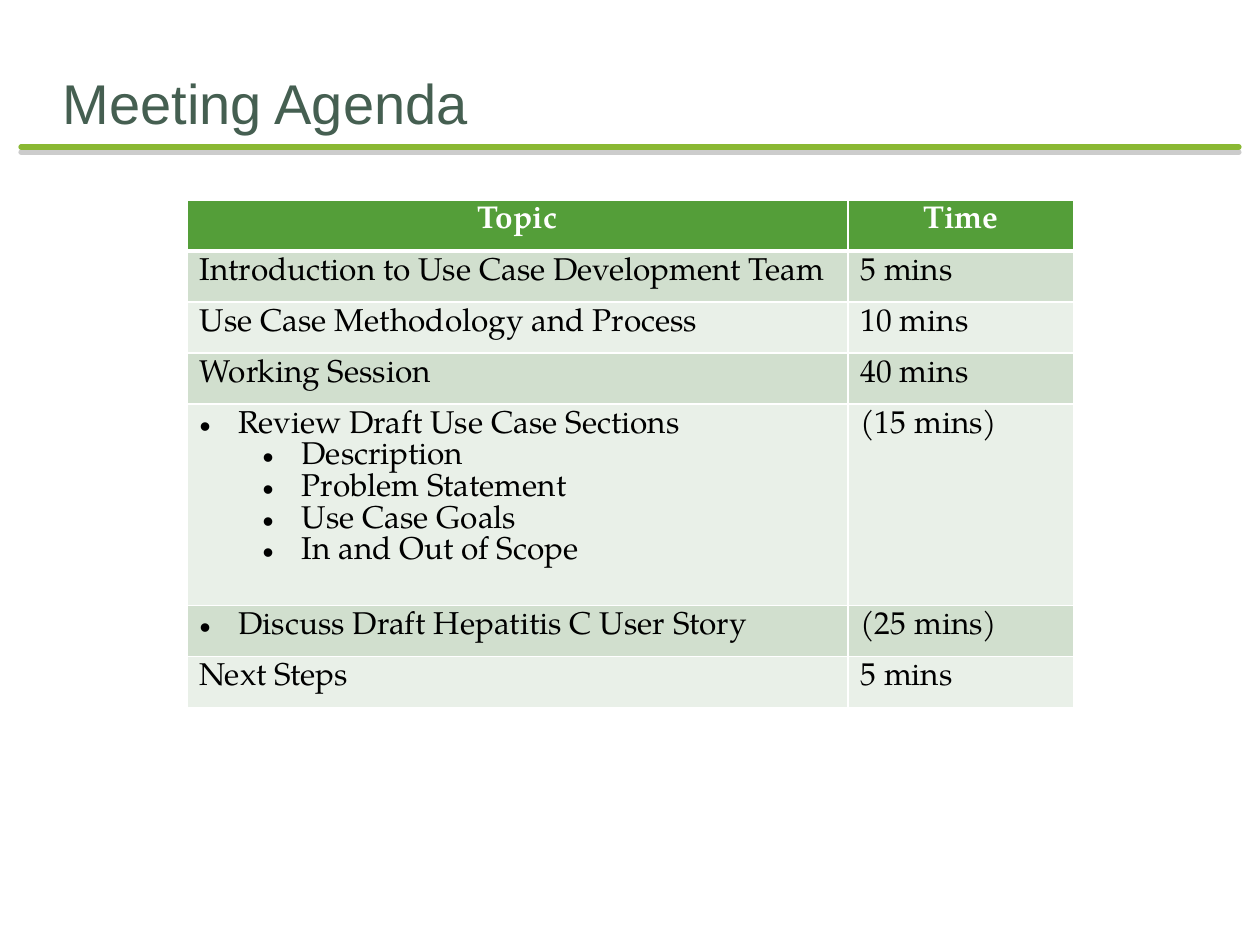
from lxml.etree import SubElement
from pptx import Presentation
from pptx.dml.color import RGBColor
from pptx.enum.shapes import MSO_CONNECTOR as Connector
from pptx.enum.text import MSO_ANCHOR as Anchor, PP_ALIGN as Align
from pptx.oxml.ns import qn
from pptx.util import Emu, Pt

COLORS = {
    "title": "455F51", "rule": "8AB833", "shadow": "808080",
    "header": "549E39", "odd_row": "D1DFCE", "even_row": "E9F0E8",
    "white": "FFFFFF", "text": "000000",
}
TITLE_FONT, TABLE_FONT = "Arial", "TeX Gyre Pagella"
HEADERS = ["Topic", "Time"]

# Each topic is a list of (bullet level, text); None means no bullet
AGENDA = [
    ([(None, "Introduction to Use Case Development Team")], "5 mins"),
    ([(None, "Use Case Methodology and Process")], "10 mins"),
    ([(None, "Working Session")], "40 mins"),
    ([(0, "Review Draft Use Case Sections"), (1, "Description"),
      (1, "Problem Statement"), (1, "Use Case Goals"),
      (1, "In and Out of Scope")], "(15 mins)"),
    ([(0, "Discuss Draft Hepatitis C User Story")], "(25 mins)"),
    ([(None, "Next Steps")], "5 mins"),
]
ROW_HEIGHT, LINE_HEIGHT, CELL_PADDING = 51, 32, 12
BULLET_HANG, LEVEL_STEP = 39, 63


def px(length):
    return Emu(round(length * 914400 / 126))


def rgb(name):
    return RGBColor.from_string(COLORS[name])


def add_run(paragraph, text, font, size, color, bold=False):
    run = paragraph.add_run()
    run.text = text
    run.font.name, run.font.size, run.font.bold = font, Pt(size), bold
    run.font.color.rgb = rgb(color)


def add_color(parent, name):
    return SubElement(parent, qn("a:srgbClr"), val=COLORS[name])


def add_title(slide, left, top, width, height):
    shape = slide.shapes.add_textbox(px(left), px(top), px(width), px(height))
    frame = shape.text_frame
    frame.word_wrap = True
    frame.vertical_anchor = Anchor.BOTTOM
    frame.margin_left = frame.margin_right = frame.margin_bottom = 0
    frame.margin_top = px(6)
    add_run(frame.paragraphs[0], "Meeting Agenda", TITLE_FONT, 32, "title")


def add_title_rule(slide, left, top, width):
    rule = slide.shapes.add_connector(
        Connector.STRAIGHT, px(left), px(top), px(left + width), px(top))
    rule.line.color.rgb = rgb("rule")
    rule.line.width = Pt(3)
    rule.line._get_or_add_ln().set("cap", "rnd")
    # Soft gray shadow straight below the rule
    effects = SubElement(rule._element.spPr, qn("a:effectLst"))
    shadow = SubElement(effects, qn("a:outerShdw"), dist=str(Pt(3)),
                        dir="5400000", rotWithShape="0")
    SubElement(add_color(shadow, "shadow"), qn("a:alpha"), val="40000")


def set_bullet(paragraph, level):
    paragraph.level = level
    properties = paragraph._p.get_or_add_pPr()
    properties.set("marL", str(px(BULLET_HANG + level * LEVEL_STEP)))
    properties.set("indent", str(-px(BULLET_HANG)))
    SubElement(properties, qn("a:buFont"), typeface="Arial")
    SubElement(properties, qn("a:buChar"), char="•")


def style_cell(cell, fill, top=1, bottom=1):
    # Borders come before the fill in the cell properties
    properties = cell._tc.get_or_add_tcPr()
    for side, width in (("L", 1), ("R", 1), ("T", top), ("B", bottom)):
        line = SubElement(properties, qn(f"a:ln{side}"), w=str(Pt(width)))
        add_color(SubElement(line, qn("a:solidFill")), "white")
    cell.fill.solid()
    cell.fill.fore_color.rgb = rgb(fill)


def fill_cell(cell, lines):
    frame = cell.text_frame
    for index, (level, text) in enumerate(lines):
        paragraph = frame.add_paragraph() if index else frame.paragraphs[0]
        if level is not None:
            set_bullet(paragraph, level)
        add_run(paragraph, text, TABLE_FONT, 18, "text")


def add_agenda_table(slide, left, top, column_widths):
    heights = [ROW_HEIGHT] + [
        max(ROW_HEIGHT, len(topic) * LINE_HEIGHT + CELL_PADDING)
        for topic, _ in AGENDA]
    table = slide.shapes.add_table(
        len(heights), len(column_widths), px(left), px(top),
        px(sum(column_widths)), px(sum(heights))).table
    for column, width in zip(table.columns, column_widths):
        column.width = px(width)
    for row, height in zip(table.rows, heights):
        row.height = px(height)

    # Header row
    for column, text in enumerate(HEADERS):
        cell = table.cell(0, column)
        style_cell(cell, "header", bottom=3)
        paragraph = cell.text_frame.paragraphs[0]
        paragraph.alignment = Align.CENTER
        add_run(paragraph, text, TABLE_FONT, 18, "white", bold=True)

    # Banded agenda rows
    for row, (topic, time) in enumerate(AGENDA, start=1):
        for column, lines in enumerate((topic, [(None, time)])):
            cell = table.cell(row, column)
            style_cell(cell, "odd_row" if row % 2 else "even_row",
                       top=3 if row == 1 else 1)
            fill_cell(cell, lines)


def main():
    presentation = Presentation()
    presentation.slide_width, presentation.slide_height = px(1260), px(945)
    slide = presentation.slides.add_slide(presentation.slide_layouts[6])
    add_title_rule(slide, 21, 147, 1218)
    add_title(slide, 63, 63, 1134, 73)
    add_agenda_table(slide, 187, 200, [661, 226])
    presentation.save("out.pptx")


if __name__ == "__main__":
    main()
